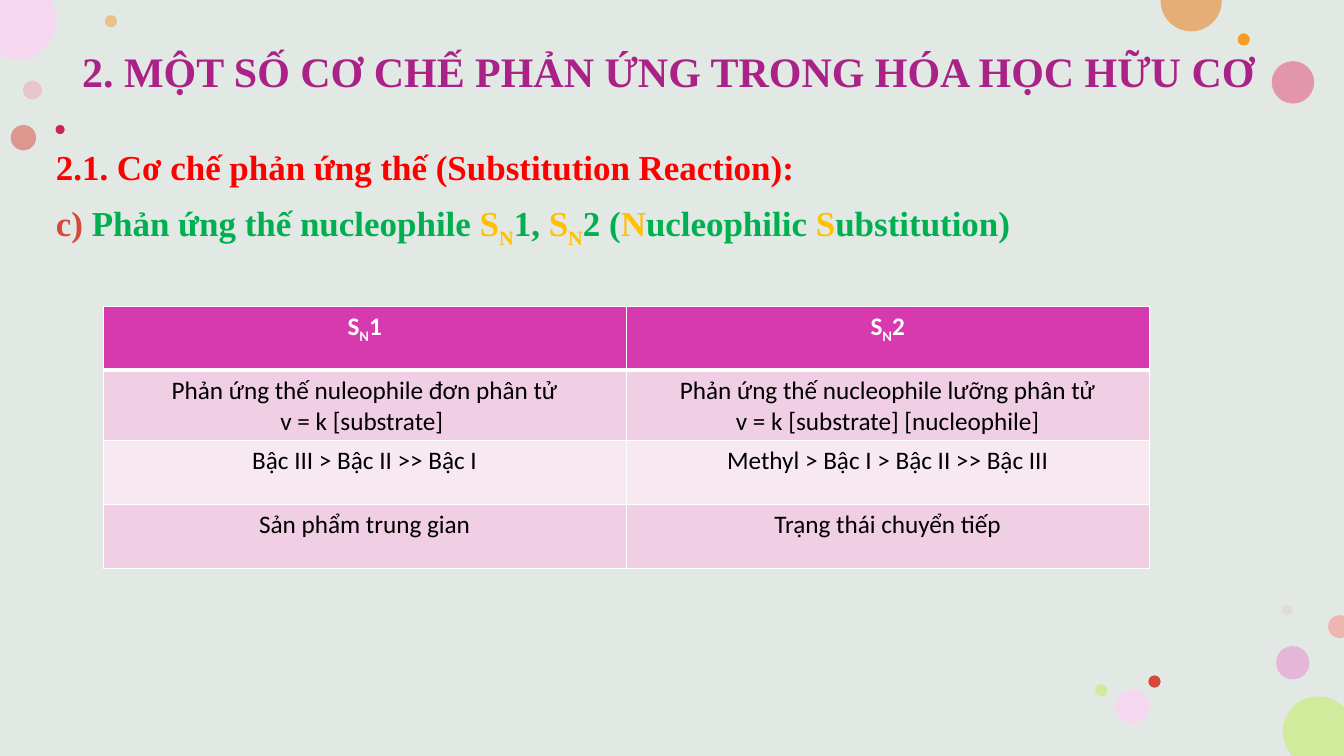
from math import ceil, cos, floor, radians, sin, tan

from lxml.etree import SubElement
from pptx import Presentation
from pptx.dml.color import RGBColor
from pptx.enum.shapes import MSO_SHAPE
from pptx.enum.text import MSO_ANCHOR, PP_ALIGN
from pptx.oxml import parse_xml
from pptx.oxml.ns import nsdecls, qn
from pptx.util import Cm, Pt

WIDTH, HEIGHT = 33.87, 19.05
SERIF = "Times New Roman"


def paint(fill, color, opacity=100):
    fill.solid()
    fill.fore_color.rgb = RGBColor.from_string(color)
    if opacity < 100:
        color_element = fill._xPr.find(qn("a:solidFill"))[0]
        SubElement(color_element, qn("a:alpha"), val=str(opacity * 1000))


def add_text(paragraph, text, size=18, font="Calibri", color="000000", bold=False, subscript=False):
    run = paragraph.add_run()
    run.text = text
    run.font.size = Pt(size)
    run.font.name = font
    run.font.bold = bold
    paint(run.font.fill, color)
    if subscript:
        run._r.get_or_add_rPr().set("baseline", "-25000")


presentation = Presentation()
presentation.slide_width, presentation.slide_height = Cm(WIDTH), Cm(HEIGHT)
slide = presentation.slides.add_slide(presentation.slide_layouts[6])

# Backdrop and whole circles: preset, left, top, width, height, colour, opacity
circles = [
    (0.58, 2.03, 0.48, "EDA4BB", 50),
    (2.64, 0.38, 0.31, "F39E29", 50),
    (32.16, 16.28, 0.84, "E788CE", 50),
    (0.27, 3.15, 0.64, "D74839", 50),
    (32.05, 1.54, 1.07, "E47699", 72),
    (31.19, 0.84, 0.31, "F39E29", 100),
    (32.31, 15.24, 0.26, "E3BEBE", 28),
    (28.94, 17.02, 0.31, "D74839", 100),
    (28.12, 17.38, 0.84, "F7D7EF", 100),
    (27.6, 17.24, 0.31, "D0EB9C", 100),
    (1.4, 3.15, 0.23, "C5275A", 100),
]
decorations = [(MSO_SHAPE.RECTANGLE, 0, 0, WIDTH, HEIGHT, "E2E8E4", 100)]
for left, top, diameter, color, opacity in circles:
    decorations.append((MSO_SHAPE.OVAL, left, top, diameter, diameter, color, opacity))
for preset, left, top, width, height, color, opacity in decorations:
    shape = slide.shapes.add_shape(preset, Cm(left), Cm(top), Cm(width), Cm(height))
    shape.shadow.inherit = False
    shape.line.fill.background()
    paint(shape.fill, color, opacity)

# Circles cut off by the slide edge: centre, radius, arc in degrees, slide corner, colour
cut_circles = [
    (33.22, 18.44, 0.89, 136.7, 316.9, [(WIDTH, HEIGHT)], "D0EB9C"),
    (0.43, 0.51, 0.99, -31, 115.7, [(0, 0)], "F7D7EF"),
    (30.02, 0.02, 0.77, -1.5, 181.5, [], "E4AE76"),
    (33.76, 15.79, 0.29, 67.7, 292.3, [], "EFB6B0"),
]
for center_x, center_y, radius, start, end, corners, color in cut_circles:
    quarters = range(floor(start / 90) + 1, ceil(end / 90))
    angles = [radians(degrees) for degrees in (start, *[90 * q for q in quarters], end)]
    points = [(center_x + radius * cos(angles[0]), center_y + radius * sin(angles[0]))]
    for first, last in zip(angles, angles[1:]):
        handle = 4 / 3 * tan((last - first) / 4)
        for angle, reach in ((first, handle), (last, -handle), (last, 0)):
            points.append((center_x + radius * (cos(angle) - reach * sin(angle)),
                           center_y + radius * (sin(angle) + reach * cos(angle))))
    outline = [(Cm(x), Cm(y)) for x, y in points + corners]
    builder = slide.shapes.build_freeform(*outline[0])
    builder.add_line_segments(outline[1:], close=True)
    cut_circle = builder.convert_to_shape()

    # Each three points of the arc become one curve
    segments = list(cut_circle._element.iter(qn("a:lnTo")))
    for index in range(0, len(points) - 1, 3):
        curve = segments[index]
        curve.tag = qn("a:cubicBezTo")
        for segment in segments[index + 1:index + 3]:
            curve.append(segment[0])
            segment.getparent().remove(segment)
    cut_circle.shadow.inherit = False
    cut_circle.line.fill.background()
    paint(cut_circle.fill, color)

# Title
title = slide.shapes.add_textbox(Cm(1.82), Cm(0.03), Cm(30.84), Cm(3.68)).text_frame
title.word_wrap = True
title.vertical_anchor = MSO_ANCHOR.MIDDLE
title.paragraphs[0].line_spacing = 0.9
add_text(title.paragraphs[0], "2. MỘT SỐ CƠ CHẾ PHẢN ỨNG TRONG HÓA HỌC HỮU CƠ",
         size=30, font=SERIF, color="AA2287", bold=True)

# Headings
RED, GREEN, GOLD = "FF0000", "00B050", "FFC000"
headings = slide.shapes.add_textbox(Cm(1.16), Cm(3.66), Cm(30.56), Cm(12.95)).text_frame
headings.word_wrap = True
section = headings.paragraphs[0]
section.line_spacing = 0.9
add_text(section, "2.1. Cơ chế phản ứng thế (Substitution Reaction):",
         size=25, font=SERIF, color=RED, bold=True)
topic = headings.add_paragraph()
topic.line_spacing = 0.9
topic.space_before = Pt(10)
topic_runs = [
    ("c) ", "D74839", False), ("Phản ứng thế nucleophile ", GREEN, False),
    ("S", GOLD, False), ("N", GOLD, True), ("1, ", GREEN, False),
    ("S", GOLD, False), ("N", GOLD, True), ("2 (", GREEN, False),
    ("N", GOLD, False), ("ucleophilic ", GREEN, False),
    ("S", GOLD, False), ("ubstitution)", GREEN, False),
]
for text, color, subscript in topic_runs:
    add_text(topic, text, size=25, font=SERIF, color=color, bold=True, subscript=subscript)

# Comparison table
rows = [
    ("1", "2"),
    ("Phản ứng thế nuleophile đơn phân tử\nv = k [substrate] ",
     "Phản ứng thế nucleophile lưỡng phân tử\nv = k [substrate] [nucleophile]"),
    ("Bậc III > Bậc II >> Bậc I", "Methyl > Bậc I > Bậc II >> Bậc III"),
    ("Sản phẩm trung gian", "Trạng thái chuyển tiếp"),
]
row_fills = ["D739AE", "F0CEE3", "F8E8F2", "F0CEE3"]
table = slide.shapes.add_table(4, 2, Cm(2.6), Cm(7.72), Cm(26.36), Cm(6.44)).table
for row_index, row in enumerate(rows):
    for column_index, content in enumerate(row):
        cell = table.cell(row_index, column_index)
        paint(cell.fill, row_fills[row_index])

        # White borders, thicker below the header
        bottom_width = 3 if row_index == 0 else 1
        sides = [("lnL", 1), ("lnR", 1), ("lnT", 1), ("lnB", bottom_width)]
        for position, (side, width) in enumerate(sides):
            border = parse_xml(
                f'<a:{side} {nsdecls("a")} w="{Pt(width)}"><a:solidFill>'
                f'<a:srgbClr val="FFFFFF"/></a:solidFill></a:{side}>')
            cell._tc.get_or_add_tcPr().insert(position, border)

        # Cell text
        frame = cell.text_frame
        for line_index, line in enumerate(content.split("\n")):
            paragraph = frame.add_paragraph() if line_index else frame.paragraphs[0]
            paragraph.alignment = PP_ALIGN.CENTER
            if row_index == 0:
                for text in ("S", "N", line):
                    add_text(paragraph, text, color="FFFFFF", bold=True, subscript=text == "N")
            else:
                add_text(paragraph, line)

presentation.save("out.pptx")
